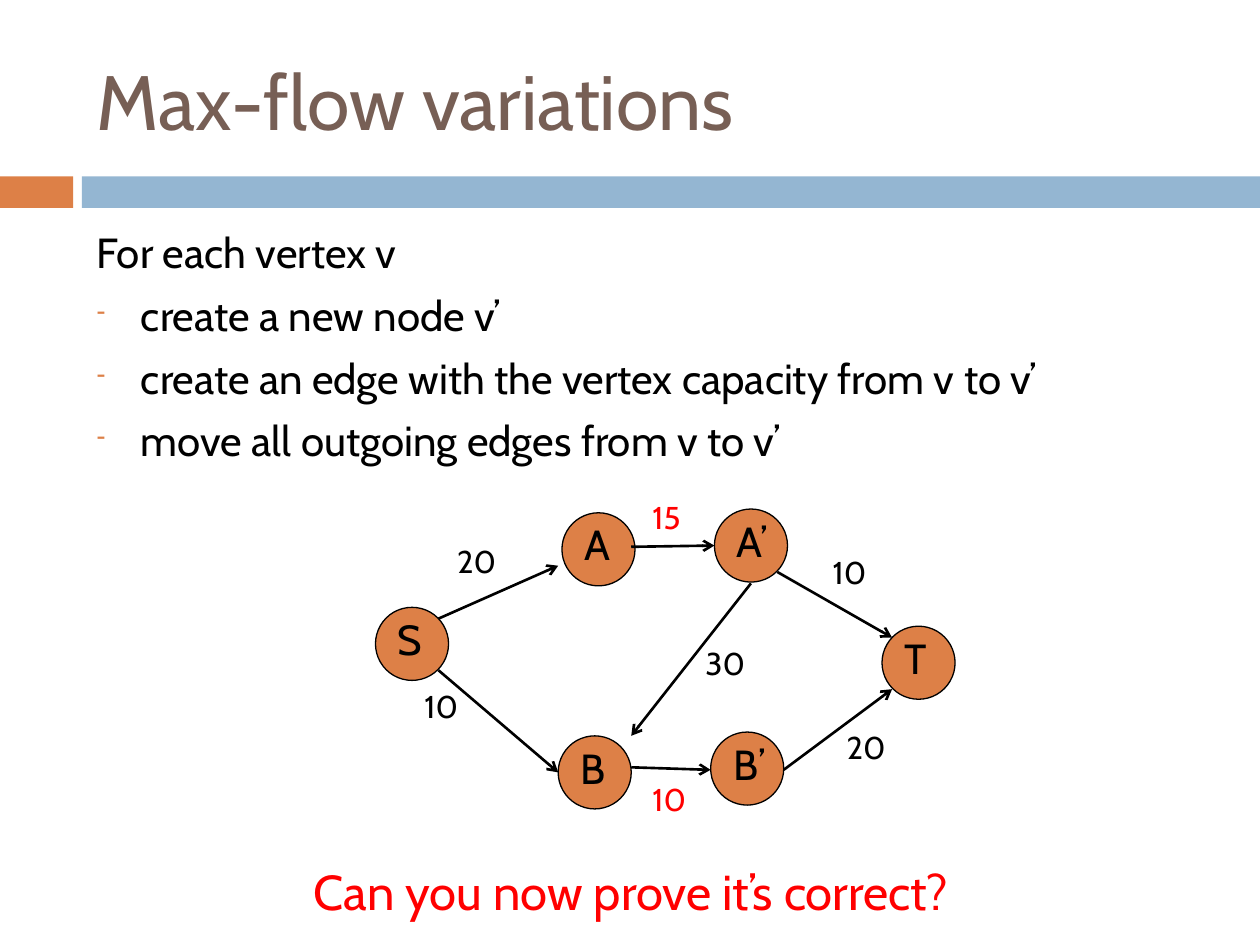
import pptx
import pptx.dml.color
import pptx.enum.shapes
import pptx.enum.text
import pptx.oxml.ns
import pptx.util
from lxml import etree

Inches = pptx.util.Inches
Pt = pptx.util.Pt
Shape = pptx.enum.shapes.MSO_SHAPE


def color(code):
    return pptx.dml.color.RGBColor.from_string(code)


def child(parent, tag, **attrs):
    return etree.SubElement(parent, pptx.oxml.ns.qn(tag), **attrs)


def write(frame, text, size=24, ink="000000", font="Cabin", gap=0, dash=None):
    first = frame.paragraphs[0]
    para = frame.add_paragraph() if first.runs else first
    para.space_before = Pt(gap)
    run = para.add_run()
    run.text = text
    run.font.size = Pt(size)
    run.font.name = font
    run.font.color.rgb = color(ink)
    if dash:
        props = para._p.get_or_add_pPr()
        props.set("marL", str(Inches(0.35)))
        props.set("indent", str(Inches(-0.35)))
        child(child(props, "a:buClr"), "a:srgbClr", val=dash)
        child(props, "a:buSzPct", val="60000")
        child(props, "a:buChar", char="-")


class Deck:
    black = "000000"
    red = "FF0000"
    orange = "DD8047"
    blue = "94B6D2"
    brown = "775F55"
    node_size = 0.58

    def __init__(self, show):
        self.slide = show.slides.add_slide(show.slide_layouts[6])
        self.shapes = self.slide.shapes

    def shape(self, kind, box, fill, edge=None, home=None):
        item = (home or self.shapes).add_shape(kind, *map(Inches, box))
        item.shadow.inherit = False
        item.fill.solid()
        item.fill.fore_color.rgb = color(fill)
        if edge:
            item.line.color.rgb = color(edge)
            item.line.width = Pt(0.75)
        else:
            item.line.fill.background()

    def text(self, box, *lines, middle=False, home=None, **style):
        frame = (home or self.shapes).add_textbox(*map(Inches, box)).text_frame
        frame.word_wrap = True
        if middle:
            frame.vertical_anchor = pptx.enum.text.MSO_ANCHOR.MIDDLE
        for line in lines:
            write(frame, line, **style)
        return frame

    def node(self, name, left, top):
        home = self.shapes.add_group_shape().shapes
        box = (left, top, self.node_size, self.node_size)
        self.shape(Shape.OVAL, box, self.orange, self.black, home)
        self.text((left + 0.08, top, 0.5, 0.5), name, home=home)

    def arrow(self, *ends):
        kind = pptx.enum.shapes.MSO_CONNECTOR.STRAIGHT
        line = self.shapes.add_connector(kind, *map(Inches, ends))
        line.line.color.rgb = color(self.black)
        line.line.width = Pt(1.5)
        child(line.line._get_or_add_ln(), "a:tailEnd", type="arrow")
        child(line._element.spPr, "a:effectLst")

    def label(self, text, left, top, ink):
        self.text((left, top, 0.75, 0.4), text, size=18, ink=ink)


def main():
    show = pptx.Presentation()
    show.slide_width = Inches(10)
    show.slide_height = Inches(7.5)
    deck = Deck(show)

    deck.shape(Shape.RECTANGLE, (0, 1.4, 0.58, 0.25), deck.orange)
    deck.shape(Shape.RECTANGLE, (0.65, 1.4, 9.35, 0.25), deck.blue)
    deck.text((0.67, 0.25, 8.92, 1.08), "Max-flow variations",
              middle=True, size=44, ink=deck.brown)

    body = deck.text((0.67, 1.75, 8.92, 2.02), "For each vertex v", gap=7)
    for step in ("create a new node v’",
                 "create an edge with the vertex capacity from v to v’",
                 "move all outgoing edges from v to v’"):
        write(body, step, gap=7, dash=deck.orange)

    for node in (("S", 2.98, 4.82), ("A", 4.46, 4.07), ("A’", 5.67, 4.04),
                 ("B", 4.43, 5.84), ("B’", 5.64, 5.81), ("T", 7, 4.97)):
        deck.node(*node)

    for ends in ((3.48, 4.91, 4.43, 4.49), (3.48, 5.32, 4.43, 6.13),
                 (6.22, 6.11, 7.08, 5.47), (5.96, 4.63, 5.01, 5.84),
                 (6.17, 4.54, 7.08, 5.06), (5.01, 4.34, 5.67, 4.33),
                 (5.01, 6.09, 5.64, 6.11)):
        deck.arrow(*ends)

    for label in (("20", 3.53, 4.25, deck.black), ("20", 6.62, 5.73, deck.black),
                  ("10", 3.27, 5.4, deck.black), ("10", 6.51, 4.34, deck.black),
                  ("30", 5.5, 5.06, deck.black), ("15", 5.08, 3.9, deck.red),
                  ("10", 5.08, 6.14, deck.red)):
        deck.label(*label)

    deck.text((2.39, 6.79, 5.82, 0.57), "Can you now prove it’s correct?",
              size=28, ink=deck.red)
    show.save("out.pptx")


if __name__ == "__main__":
    main()
